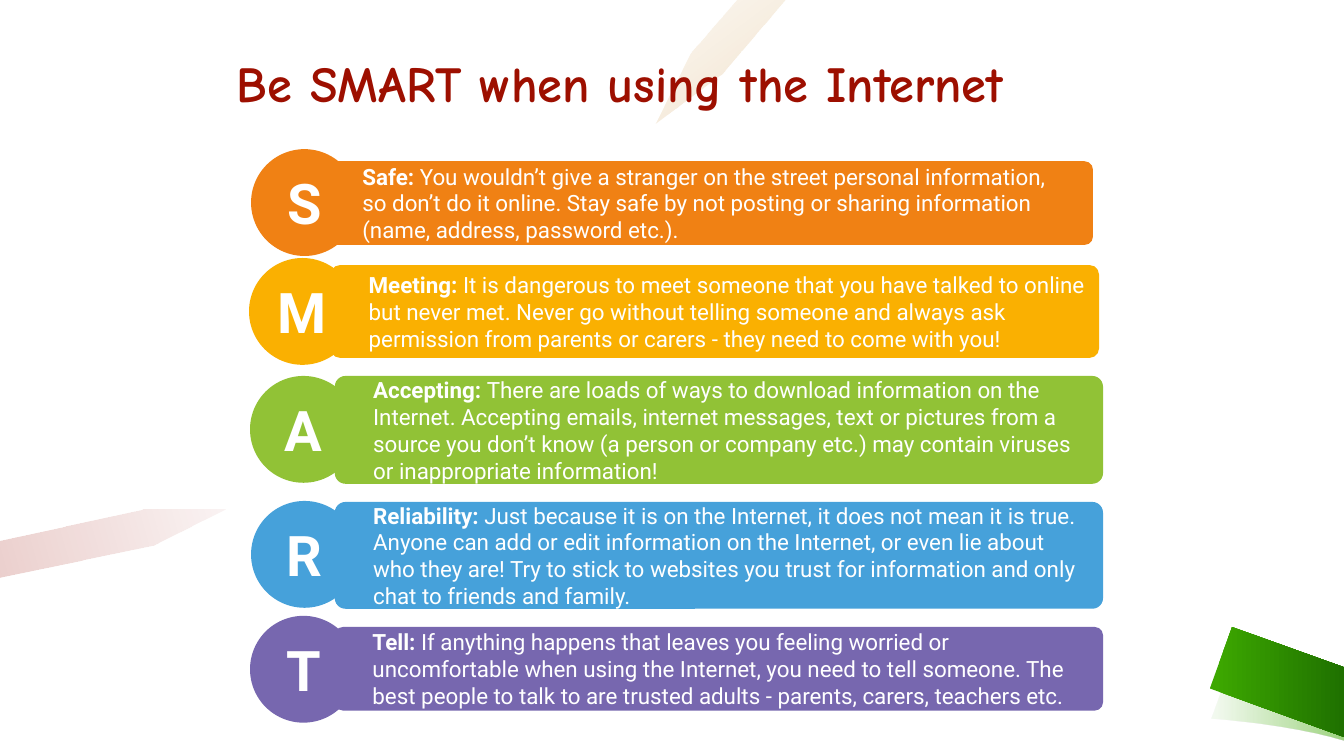
"""Build the slide on using the Internet the SMART way."""
from lxml import etree
from pptx import Presentation
from pptx import util as u
from pptx.dml import color
from pptx.enum import shapes, text
from pptx.oxml import ns

WHITE = "FFFFFF"
CIRCLE_SIZE = 1.06
BAR_WIDTH = 7.62

# letter, colour, circle left and top, bar left, top and height, right inset, heading, advice
RULES = [
    ("S", "F08114", 2.49, 1.48, 3.22, 1.6, 0.83, 0.35, "Safe: ",
     "You wouldn’t give a stranger on the street personal information, so don’t do it online. "
     "Stay safe by not posting or sharing information (name, address, password etc.)."),
    ("M", "FAB001", 2.47, 2.56, 3.28, 2.63, 0.92, 0.1, "Meeting: ",
     "It is dangerous to meet someone that you have talked to online but never met. Never go "
     "without telling someone and always ask permission from parents or carers - they need to "
     "come with you!"),
    ("A", "91C236", 2.48, 3.73, 3.32, 3.73, 1.07, 0.1, "Accepting: ",
     "There are loads of ways to download information on the Internet. Accepting emails, "
     "internet messages, text or pictures from a source you don’t know (a person or company "
     "etc.) may contain viruses or inappropriate information!"),
    ("R", "46A1DA", 2.49, 4.97, 3.32, 4.98, 1.06, 0.1, "Reliability: ",
     "Just because it is on the Internet, it does not mean it is true. Anyone can add or edit "
     "information on the Internet, or even lie about who they are! Try to stick to websites you "
     "trust for information and only chat to friends and family."),
    ("T", "7767AF", 2.48, 6.11, 3.32, 6.22, 0.83, 0.1, "Tell: ",
     "If anything happens that leaves you feeling worried or uncomfortable when using the "
     "Internet, you need to tell someone. The best people to talk to are trusted adults - "
     "parents, carers, teachers etc."),
]


def rgb(value):
    """Return the colour for a hex string."""
    return color.RGBColor.from_string(value)


def curve(*controls, steps=12):
    """Return points along a cubic curve through four control points."""
    points = []
    for step in range(steps + 1):
        t = step / steps
        weights = ((1 - t) ** 3, 3 * t * (1 - t) ** 2, 3 * t ** 2 * (1 - t), t ** 3)
        points.append(tuple(sum(w * c[axis] for w, c in zip(weights, controls))
                            for axis in (0, 1)))
    return points


def write(shape, *runs, font="Roboto", size=16, hue=WHITE, align=None, after=None,
          spacing=None, insets=(0.1, 0.05, 0.1, 0.05)):
    """Write (wording, bold) runs as one formatted paragraph."""
    frame = shape.text_frame
    frame.word_wrap = True
    frame.vertical_anchor = text.MSO_ANCHOR.MIDDLE
    (frame.margin_left, frame.margin_top,
     frame.margin_right, frame.margin_bottom) = map(u.Inches, insets)
    paragraph = frame.paragraphs[0]
    paragraph.alignment = align or text.PP_ALIGN.LEFT
    paragraph.line_spacing = spacing
    if after:
        paragraph.space_after = u.Pt(after)
    for wording, bold in runs:
        run = paragraph.add_run()
        run.text = wording
        run.font.name, run.font.size, run.font.bold = font, u.Pt(size), bold
        run.font.color.rgb = rgb(hue)


class Painter:
    """Draw elements in one style on the current slide."""

    def __init__(self, slide):
        """Keep the slide to draw on."""
        self.slide = slide

    def title(self, wording, *box):
        """Add the slide title."""
        shape = self.slide.shapes.add_textbox(*map(u.Inches, box))
        write(shape, (wording, True), font="Comic Neue", size=36, hue="9D0F00", spacing=0.9)

    def block(self, kind, hue, *box):
        """Add a plain filled preset shape."""
        shape = self.slide.shapes.add_shape(kind, *map(u.Inches, box))
        shape.shadow.inherit = False
        shape.fill.solid()
        shape.fill.fore_color.rgb = rgb(hue)
        shape.line.fill.background()
        return shape

    def bar(self, hue, box, heading, advice, right_inset):
        """Add a rounded bar with a bold heading and advice."""
        shape = self.block(shapes.MSO_SHAPE.ROUNDED_RECTANGLE, hue, *box)
        shape.adjustments[0] = 0.1
        write(shape, (heading, True), (advice, False), after=12,
              insets=(0.35, 0.05, right_inset, 0.05))

    def circle(self, hue, left, top, letter):
        """Add a circle with a large letter."""
        shape = self.block(shapes.MSO_SHAPE.OVAL, hue, left, top, CIRCLE_SIZE, CIRCLE_SIZE)
        write(shape, (letter, True), size=40, align=text.PP_ALIGN.CENTER)

    def outline(self, points, stops, angle=0):
        """Add a polygon with a gradient of (position, colour, opacity) stops."""
        corners = [(u.Inches(x), u.Inches(y)) for x, y in points]
        builder = self.slide.shapes.build_freeform(*corners[0])
        builder.add_line_segments(corners[1:], close=True)
        shape = builder.convert_to_shape()
        shape.shadow.inherit = False
        shape.line.fill.background()
        shape.fill.gradient()
        shape.fill.gradient_angle = (360 - angle) % 360
        for stop, (position, hue, _) in zip(shape.fill.gradient_stops, stops):
            stop.position = position
            stop.color.rgb = rgb(hue)
        hues = shape.element.spPr.iter(ns.qn("a:srgbClr"))
        for element, (_, _, opacity) in zip(hues, stops):
            etree.SubElement(element, ns.qn("a:alpha")).set("val", str(opacity * 1000))


def main():
    """Build and save the presentation."""
    presentation = Presentation()
    presentation.slide_width = u.Inches(13.33)
    presentation.slide_height = u.Inches(7.5)
    painter = Painter(presentation.slides.add_slide(presentation.slide_layouts[6]))

    eraser_shade = (curve((12.02, 7.13), (12.02, 7.13), (12.78, 7.18), (13.33, 7.35))
                    + curve((13.33, 6.68), (12.72, 6.51), (12.24, 6.52), (12.24, 6.52)))
    painter.outline(eraser_shade, [(0.03, "3DA800", 6), (1, "3DA800", 50)])
    painter.outline([(13.33, 6.62), (12.22, 6.22), (12, 6.83), (13.33, 7.31)],
                    [(0.03, "3DA800", 100), (1, "1F7100", 100)])
    painter.outline([(7.79, 0), (7.31, 0), (6.85, 0.53), (6.5, 1.23), (7.16, 0.74)],
                    [(0, "C07400", 5), (1, "C07400", 20)], angle=53)
    painter.outline([(2.24, 5.05), (1.42, 5.05), (0, 5.36), (0, 5.73), (1.53, 5.41)],
                    [(0, "9D0F00", 5), (1, "9D0F00", 20)], angle=164)

    painter.title("Be SMART when using the Internet", 2.25, 0.13, 9.56, 1.45)
    for (letter, hue, circle_left, circle_top, bar_left, bar_top, bar_height,
         right_inset, heading, advice) in reversed(RULES):
        painter.bar(hue, (bar_left, bar_top, BAR_WIDTH, bar_height),
                    heading, advice, right_inset)
        painter.circle(hue, circle_left, circle_top, letter)
    presentation.save("out.pptx")


if __name__ == "__main__":
    main()
